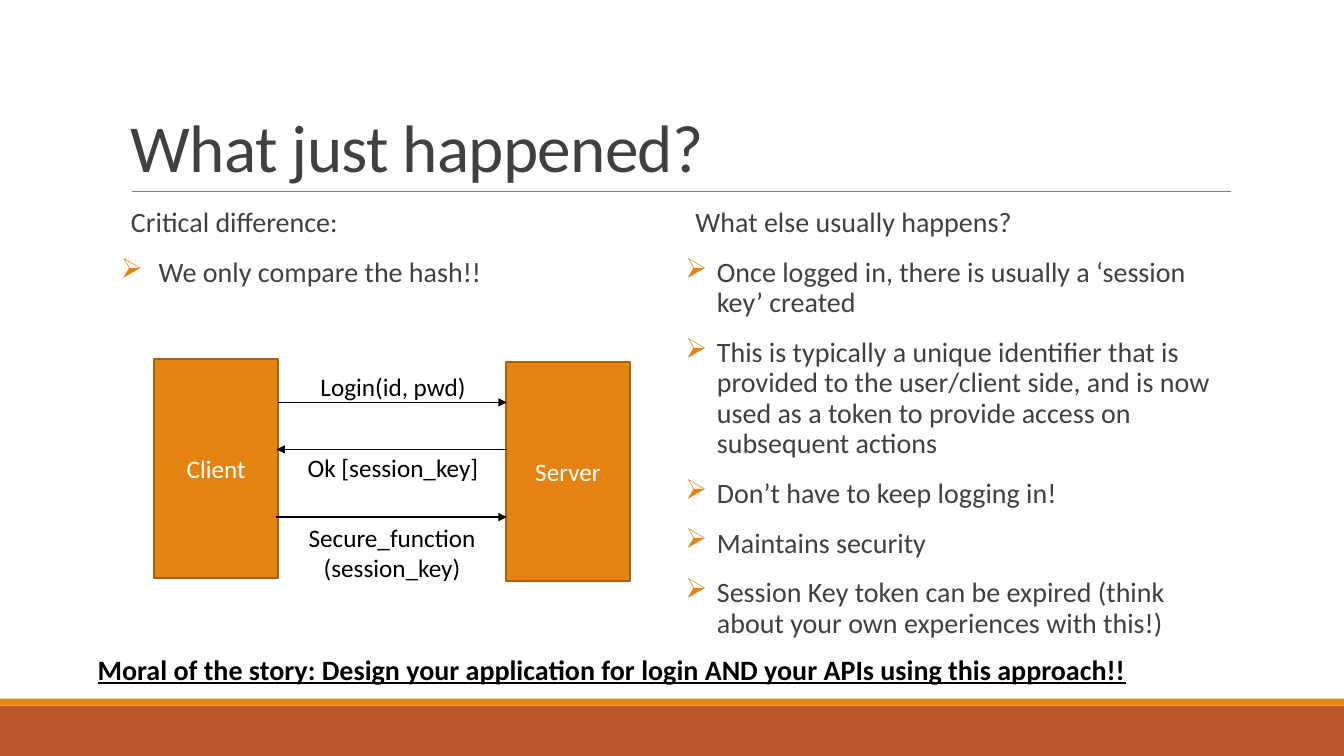
import dataclasses
import typing

import lxml.etree
import pptx
import pptx.dml.color
import pptx.enum.shapes
import pptx.enum.text
import pptx.oxml.ns
import pptx.slide
import pptx.text.text
import pptx.util

Pt = pptx.util.Pt
Align = pptx.enum.text.PP_ALIGN
Anchor = pptx.enum.text.MSO_ANCHOR

ORANGE = "E48312"
DARK_ORANGE = "A9610D"
RUST = "BD582C"
CHARCOAL = "404040"
GRAY = "808080"
BLACK = "000000"
WHITE = "FFFFFF"


@dataclasses.dataclass(frozen=True)
class Box:
    left: float
    top: float
    width: float
    height: float
    fill: str
    outline: str | None = None
    label: str = ""


@dataclasses.dataclass(frozen=True)
class Line:
    start: float
    end: float
    y: float
    color: str = BLACK
    width: float = 1
    arrow: bool = True


@dataclasses.dataclass(frozen=True)
class Caption:
    left: float
    top: float
    width: float
    height: float
    lines: tuple[str, ...]


@dataclasses.dataclass(frozen=True)
class Column:
    left: float
    indent: float
    heading: str
    points: tuple[str, ...]


BOXES = (
    Box(0, 504, 960, 36, RUST),
    Box(0, 499, 960, 5, ORANGE),
    Box(110, 256.3, 88.7, 156.5, ORANGE, DARK_ORANGE, "Client"),
    Box(361.4, 258.5, 88.7, 156.5, ORANGE, DARK_ORANGE, "Server"),
)

LINES = (
    Line(94.3, 879, 136.8, GRAY, 0.5, False),
    Line(198.7, 362, 287.5),
    Line(197.5, 362, 369.3),
    Line(362, 197.5, 321),
)

CAPTIONS = (
    Caption(216, 261.4, 129.6, 29, ("Login(id, pwd)",)),
    Caption(199.4, 319.2, 162.7, 29, ("Ok [session_key]",)),
    Caption(198.7, 369.3, 162.7, 51, ("Secure_function", "(session_key)")),
)

COLUMNS = (
    Column(86.4, 27, "Critical difference:", ("We only compare the hash!!",)),
    Column(489.6, 22.5, "What else usually happens?", (
        "Once logged in, there is usually a ‘session key’ created",
        "This is typically a unique identifier that is provided to the user/client side, "
        "and is now used as a token to provide access on subsequent actions",
        "Don’t have to keep logging in!",
        "Maintains security",
        "Session Key token can be expired (think about your own experiences with this!)",
    )),
)


def rgb(color: str) -> pptx.dml.color.RGBColor:
    return pptx.dml.color.RGBColor.from_string(color)


def add_child(parent: typing.Any, tag: str, **attributes: str) -> typing.Any:
    return lxml.etree.SubElement(parent, pptx.oxml.ns.qn(tag), attributes)


def write_text(paragraph: typing.Any, text: str, *, size: float = 18, color: str = BLACK,
               align: Align = Align.LEFT, bold: bool = False, underline: bool = False,
               line_spacing: float = 1, before: float = 0, after: float = 0,
               margin: float = 0, bullet: str = "", tracking: float = 0) -> None:
    paragraph.alignment = align
    paragraph.line_spacing = line_spacing
    paragraph.space_before = Pt(before)
    paragraph.space_after = Pt(after)
    run = paragraph.add_run()
    run.text = text
    run.font.name = "Calibri"
    run.font.size = Pt(size)
    run.font.bold = bold
    run.font.underline = underline
    run.font.color.rgb = rgb(color)
    if tracking:
        run._r.get_or_add_rPr().set("spc", str(round(tracking * 100)))
    properties = paragraph._p.get_or_add_pPr()
    properties.set("marL", str(Pt(margin)))
    if bullet:
        properties.set("indent", str(-Pt(margin)))
        add_child(add_child(properties, "a:buClr"), "a:srgbClr", val=ORANGE)
        add_child(properties, "a:buChar", char=bullet)


def add_text_box(slide: pptx.slide.Slide, left: float, top: float, width: float, height: float,
                 anchor: Anchor = Anchor.TOP, side_inset: float = 7.2) -> pptx.text.text.TextFrame:
    shape = slide.shapes.add_textbox(Pt(left), Pt(top), Pt(width), Pt(height))
    frame = shape.text_frame
    frame.word_wrap = True
    frame.vertical_anchor = anchor
    frame.margin_left = frame.margin_right = Pt(side_inset)
    return frame


def add_box(slide: pptx.slide.Slide, box: Box) -> None:
    shape = slide.shapes.add_shape(pptx.enum.shapes.MSO_SHAPE.RECTANGLE,
                                   Pt(box.left), Pt(box.top), Pt(box.width), Pt(box.height))
    shape.shadow.inherit = False
    shape.fill.solid()
    shape.fill.fore_color.rgb = rgb(box.fill)
    if box.outline:
        shape.line.color.rgb = rgb(box.outline)
        shape.line.width = Pt(1.25)
    else:
        shape.line.fill.background()
    if box.label:
        shape.text_frame.vertical_anchor = Anchor.MIDDLE
        write_text(shape.text_frame.paragraphs[0], box.label, color=WHITE, align=Align.CENTER)


def add_line(slide: pptx.slide.Slide, line: Line) -> None:
    connector = slide.shapes.add_connector(pptx.enum.shapes.MSO_CONNECTOR.STRAIGHT,
                                           Pt(line.start), Pt(line.y), Pt(line.end), Pt(line.y))
    connector.line.color.rgb = rgb(line.color)
    connector.line.width = Pt(line.width)
    if line.arrow:
        add_child(connector.line._get_or_add_ln(), "a:tailEnd", type="triangle")
    add_child(connector._element.spPr, "a:effectLst")


def add_caption(slide: pptx.slide.Slide, caption: Caption) -> None:
    frame = add_text_box(slide, caption.left, caption.top, caption.width, caption.height)
    for index, text in enumerate(caption.lines):
        paragraph = frame.add_paragraph() if index else frame.paragraphs[0]
        write_text(paragraph, text, align=Align.CENTER)


def add_column(slide: pptx.slide.Slide, column: Column) -> None:
    frame = add_text_box(slide, column.left, 145.4, 388.8, 316.8, side_inset=0)
    body = dict(size=20, color=CHARCOAL, line_spacing=0.9, before=12, after=2)
    write_text(frame.paragraphs[0], column.heading, margin=7.2, **body)
    for point in column.points:
        write_text(frame.add_paragraph(), point, margin=column.indent, bullet="➢", **body)


def main() -> None:
    presentation = pptx.Presentation()
    presentation.slide_width = Pt(960)
    presentation.slide_height = Pt(540)
    slide = presentation.slides.add_slide(presentation.slide_layouts[6])
    for box in BOXES:
        add_box(slide, box)
    for line in LINES:
        add_line(slide, line)
    title = add_text_box(slide, 86.4, 22.3, 792, 114.5, anchor=Anchor.BOTTOM)
    write_text(title.paragraphs[0], "What just happened?", size=48, color=CHARCOAL,
               line_spacing=0.85, tracking=-0.5)
    for column in COLUMNS:
        add_column(slide, column)
    moral = add_text_box(slide, 62.6, 462.2, 854, 31.5)
    write_text(moral.paragraphs[0],
               "Moral of the story: Design your application for login AND your APIs "
               "using this approach!!", size=20, bold=True, underline=True)
    for caption in CAPTIONS:
        add_caption(slide, caption)
    presentation.save("out.pptx")


if __name__ == "__main__":
    main()
